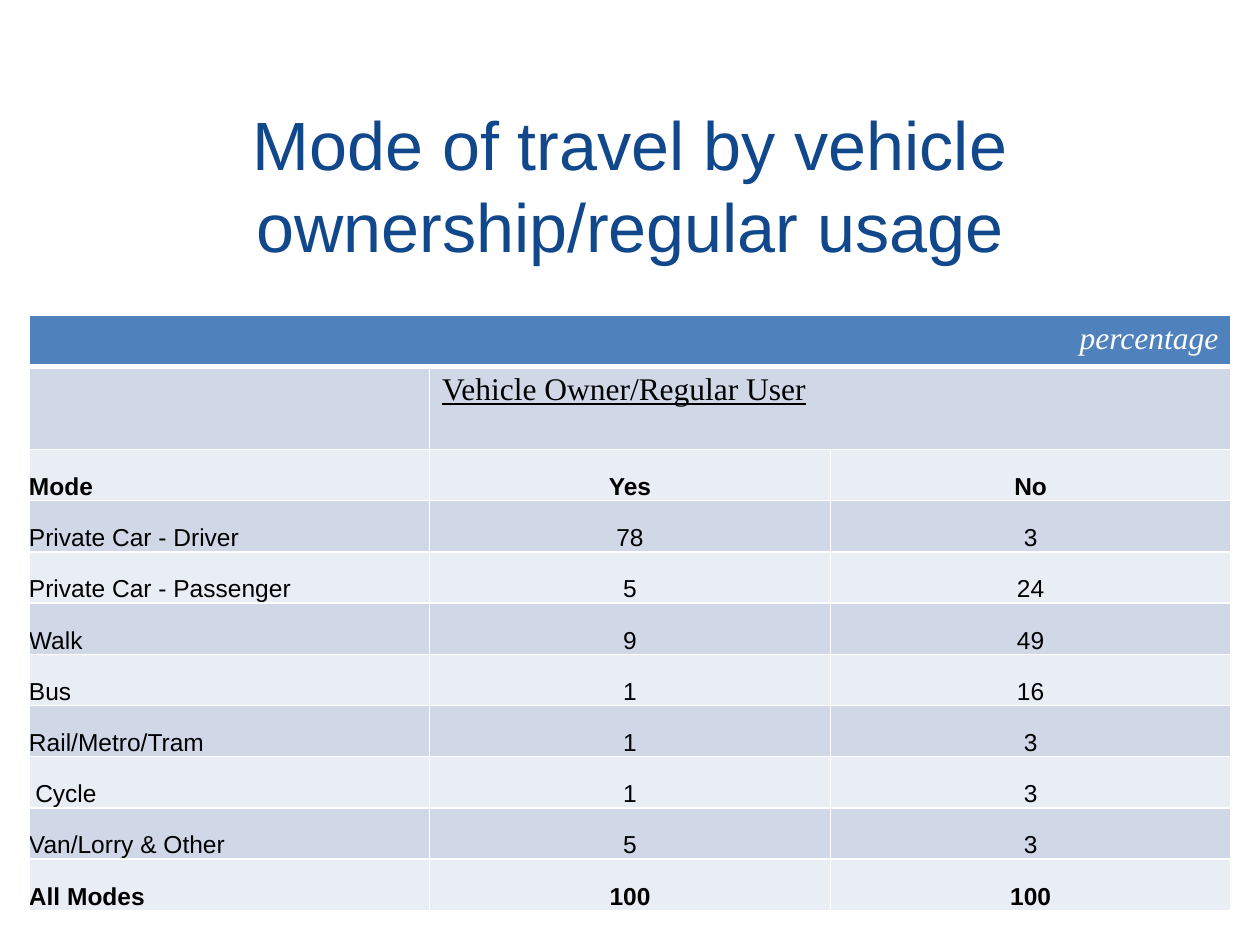
from lxml import etree
from pptx import Presentation
from pptx import util as u
from pptx.dml import color
from pptx.enum import text
from pptx.oxml import ns

WIDTH, HEIGHT = u.Inches(10), u.Inches(7.5)
MARGIN = 0.023 * WIDTH
HEADER_FILL, BANDS = "4F81BD", ("E9EDF4", "D0D8E8")
MODES = [
    ("Mode", "Yes", "No"),
    ("Private Car - Driver", "78", "3"),
    ("Private Car - Passenger", "5", "24"),
    ("Walk", "9", "49"),
    ("Bus", "1", "16"),
    ("Rail/Metro/Tram", "1", "3"),
    ("Cycle", "1", "3"),
    ("Van/Lorry & Other", "5", "3"),
    ("All Modes", "100", "100"),
]


def rgb(value):
    return color.RGBColor.from_string(value)


def write(frame, words, size, face, ink, align, **style):
    frame.text = words
    paragraph = frame.paragraphs[0]
    paragraph.alignment = align
    font = paragraph.runs[0].font
    font.size, font.name = u.Pt(size), face
    font.color.rgb = rgb(ink)
    for name, value in style.items():
        setattr(font, name, value)


def paint(cell, fill, bottom=1):
    properties = cell._tc.get_or_add_tcPr()
    for side, points in (("L", 1), ("R", 1), ("T", 1), ("B", bottom)):
        border = etree.SubElement(properties, ns.qn(f"a:ln{side}"), w=str(u.Pt(points)))
        solid = etree.SubElement(border, ns.qn("a:solidFill"))
        etree.SubElement(solid, ns.qn("a:srgbClr"), val="FFFFFF")
    cell.fill.solid()
    cell.fill.fore_color.rgb = rgb(fill)


def place_title(slide, left, top, width, height):
    title = slide.shapes.title
    title.left, title.top, title.width, title.height = map(int, (left, top, width, height))
    title.text_frame.word_wrap = True
    title.text_frame.vertical_anchor = text.MSO_ANCHOR.MIDDLE
    write(title.text_frame, "Mode of travel by vehicle ownership/regular usage",
          39, "Arial", "11478B", text.PP_ALIGN.CENTER)


def place_mode(table, row, values, bold):
    for column, value in enumerate(values):
        cell = table.cell(row, column)
        cell.margin_left = cell.margin_right = cell.margin_top = cell.margin_bottom = 0
        cell.vertical_anchor = text.MSO_ANCHOR.BOTTOM
        align = text.PP_ALIGN.CENTER if column else text.PP_ALIGN.LEFT
        write(cell.text_frame, value, 14, "Arial", "000000", align, bold=bold)
        if value == "Cycle":
            cell.margin_left = u.Inches(0.05)


def place_table(slide, left, top, width, height):
    row_count, column_count = len(MODES) + 2, len(MODES[0])
    table = slide.shapes.add_table(
        row_count, column_count, *map(int, (left, top, width, height))).table
    group_height = 0.14 * height
    for index, row in enumerate(table.rows):
        row.height = int(group_height if index == 1
                         else (height - group_height) / (row_count - 1))
        for cell in row.cells:
            paint(cell, BANDS[index % 2] if index else HEADER_FILL, 1 if index else 3)
    unit, group = table.cell(0, 0), table.cell(1, 1)
    unit.merge(table.cell(0, column_count - 1))
    group.merge(table.cell(1, column_count - 1))
    write(unit.text_frame, "percentage", 18, "Times New Roman", "FFFFFF",
          text.PP_ALIGN.RIGHT, italic=True, bold=False)
    write(group.text_frame, "Vehicle Owner/Regular User", 18, "Times New Roman",
          "000000", text.PP_ALIGN.LEFT, underline=True)
    for index, values in enumerate(MODES):
        place_mode(table, index + 2, values, index in (0, len(MODES) - 1))


def main():
    deck = Presentation()
    deck.slide_width, deck.slide_height = WIDTH, HEIGHT
    slide = deck.slides.add_slide(deck.slide_layouts[5])
    content_width = WIDTH - 2 * MARGIN
    place_title(slide, MARGIN, 0.11 * HEIGHT, content_width, 0.17 * HEIGHT)
    place_table(slide, MARGIN, HEIGHT / 3, content_width, 0.63 * HEIGHT)
    deck.save("out.pptx")


if __name__ == "__main__":
    main()
